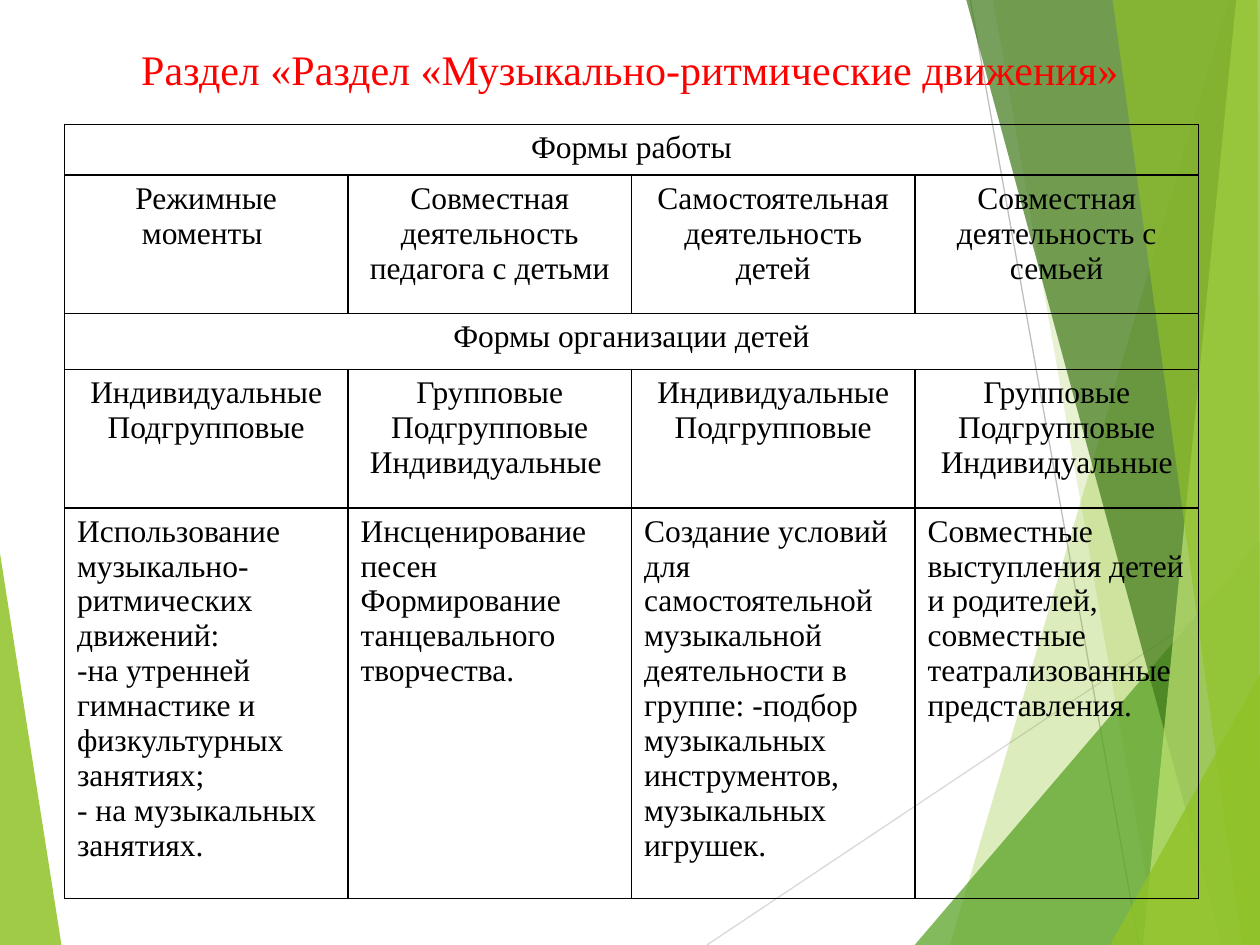
from lxml import etree
from pptx import Presentation
from pptx import util as u
from pptx.dml.color import RGBColor
from pptx.enum import shapes, text
from pptx.oxml import ns

RIGHT, BOTTOM = 25.4, 19.05
CORNER, TOP_CORNER = (RIGHT, BOTTOM), (RIGHT, 0)


def color(value):
    return RGBColor.from_string(value)


def add_element(parent, tag, **attributes):
    return etree.SubElement(parent, ns.qn(tag), attributes)


class SlideBuilder:
    font = "Times New Roman"
    black = "000000"

    def __init__(self, slide):
        self.slide = slide

    def facet(self, points, fill, opacity):
        """Draw a translucent polygon from points in centimetres."""
        points = [(u.Cm(x), u.Cm(y)) for x, y in points]
        builder = self.slide.shapes.build_freeform(*points[0], scale=1.0)
        builder.add_line_segments(points[1:], close=True)
        shape = builder.convert_to_shape()
        shape.shadow.inherit = False
        shape.line.fill.background()
        shape.fill.solid()
        shape.fill.fore_color.rgb = color(fill)
        srgb = shape._element.spPr.find(".//" + ns.qn("a:srgbClr"))
        add_element(srgb, "a:alpha", val=str(opacity * 1000))

    def line(self, start, end, stroke):
        ends = [u.Cm(value) for value in (*start, *end)]
        connector = self.slide.shapes.add_connector(
            shapes.MSO_CONNECTOR.STRAIGHT, *ends)
        connector.line.color.rgb = color(stroke)
        connector.line.width = u.Pt(0.75)
        add_element(connector._element.spPr, "a:effectLst")

    def fill_text(self, frame, content, size, fill, align):
        frame.text = content
        for paragraph in frame.paragraphs:
            paragraph.alignment = align
            for run in paragraph.runs:
                run.font.name = self.font
                run.font.size = u.Pt(size)
                run.font.color.rgb = color(fill)

    def title(self, content, left, top, width, height):
        box = self.slide.shapes.add_textbox(
            u.Cm(left), u.Cm(top), u.Cm(width), u.Cm(height))
        box.text_frame.word_wrap = True
        self.fill_text(box.text_frame, content, 24, "FF0000",
                       text.PP_ALIGN.CENTER)

    def border(self, cell):
        properties = cell._tc.get_or_add_tcPr()
        for index, side in enumerate(("a:lnL", "a:lnR", "a:lnT", "a:lnB")):
            line = etree.Element(ns.qn(side), w=str(u.Pt(1)))
            fill = add_element(line, "a:solidFill")
            add_element(fill, "a:srgbClr", val=self.black)
            properties.insert(index, line)

    def table(self, rows, heights, left, top, width):
        """Draw a table; a row with one text spans every column."""
        columns = max(len(row) for row in rows)
        table = self.slide.shapes.add_table(
            len(rows), columns, u.Cm(left), u.Cm(top),
            u.Cm(width), u.Cm(sum(heights))).table
        table.first_row = table.horz_banding = False
        for row, height in zip(table.rows, heights):
            row.height = u.Cm(height)
        for cell in table.iter_cells():
            cell.fill.background()
            self.border(cell)
        for index, row in enumerate(rows):
            if len(row) == 1:
                table.cell(index, 0).merge(table.cell(index, columns - 1))
            last = index == len(rows) - 1
            align = text.PP_ALIGN.LEFT if last else text.PP_ALIGN.CENTER
            for column, content in enumerate(row):
                frame = table.cell(index, column).text_frame
                self.fill_text(frame, content, 18, self.black, align)


LEFT_FACET = ([(0, 11.15), (1.24, BOTTOM), (0, BOTTOM)], "90C226", 85)
LINES = [
    ((14.25, BOTTOM), (RIGHT, 11.61), "D9D9D9"),
    ((19.56, 0), (22.96, BOTTOM), "BFBFBF"),
]
RIGHT_FACETS = [
    ([(24.77, 0), (19.15, BOTTOM), CORNER, TOP_CORNER], "90C226", 30),
    ([(20.02, 0), (23.34, BOTTOM), CORNER, TOP_CORNER], "90C226", 20),
    ([(18.44, BOTTOM), (RIGHT, 10.9), CORNER], "54A021", 72),
    ([(19.48, 0), (24.64, BOTTOM), CORNER, TOP_CORNER], "3F7819", 70),
    ([(24.92, 0), (23.04, BOTTOM), CORNER, TOP_CORNER], "C0E474", 70),
    ([(22.43, 0), (25.04, BOTTOM), CORNER, (25.35, 0)], "90C226", 65),
    ([(22.38, BOTTOM), (RIGHT, 13.59), CORNER], "90C226", 80),
]
ROWS = [
    ["Формы работы"],
    ["Режимные моменты ", "Совместная деятельность педагога с детьми",
     "Самостоятельная деятельность детей", "Совместная деятельность с семьей"],
    ["Формы организации детей"],
    ["Индивидуальные Подгрупповые",
     "Групповые Подгрупповые Индивидуальные ",
     "Индивидуальные Подгрупповые",
     "Групповые Подгрупповые Индивидуальные"],
    ["Использование музыкально-ритмических движений:\n"
     "-на утренней гимнастике и физкультурных занятиях;\n"
     "- на музыкальных занятиях.",
     "Инсценирование песен Формирование танцевального творчества.",
     "Создание условий для самостоятельной музыкальной деятельности в группе: "
     "-подбор музыкальных инструментов, музыкальных игрушек.",
     "Совместные выступления детей и родителей, совместные "
     "театрализованные представления."],
]
ROW_HEIGHTS = [1, 2.79, 1.13, 2.79, 7.28]


def main():
    presentation = Presentation()
    presentation.slide_width, presentation.slide_height = u.Cm(RIGHT), u.Cm(BOTTOM)
    slide = presentation.slides.add_slide(presentation.slide_layouts[6])
    builder = SlideBuilder(slide)
    builder.facet(*LEFT_FACET)
    for line in LINES:
        builder.line(*line)
    for facet in RIGHT_FACETS:
        builder.facet(*facet)
    builder.title("Раздел «Раздел «Музыкально-ритмические движения»",
                  1.27, 0.76, 22.86, 1.75)
    builder.table(ROWS, ROW_HEIGHTS, 1.3, 2.51, 22.86)
    presentation.save("out.pptx")


if __name__ == "__main__":
    main()
